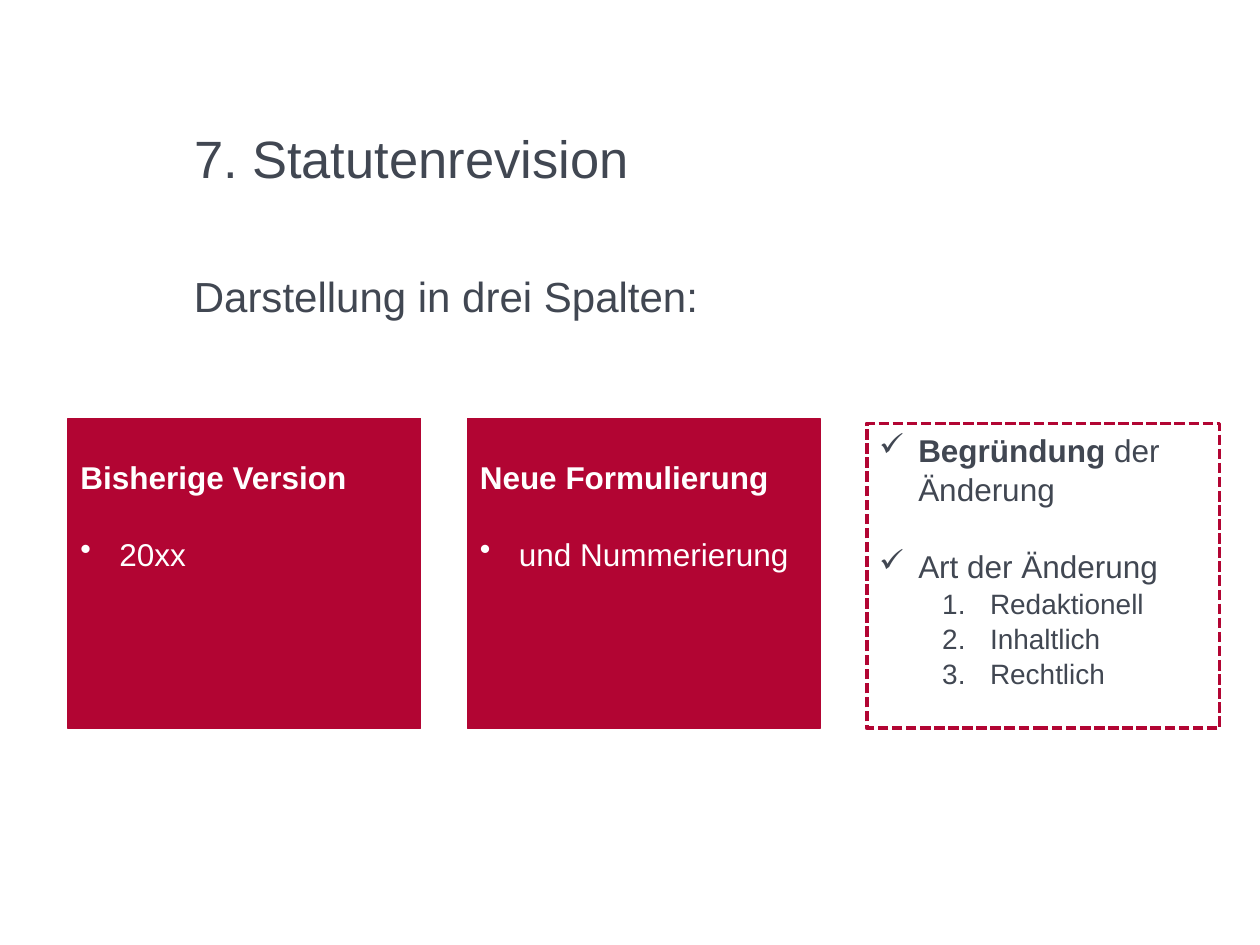
from dataclasses import dataclass
from lxml.etree import SubElement
from pptx import Presentation
from pptx.dml.color import RGBColor as RGB
from pptx.enum.dml import MSO_LINE as Dash
from pptx.enum.shapes import MSO_SHAPE as Shape
from pptx.enum.text import MSO_ANCHOR as Anchor, PP_ALIGN as Align
from pptx.oxml.ns import qn
from pptx.util import Inches, Pt


@dataclass(frozen=True)
class Theme:
    font: str = "Arial"
    red: RGB = RGB(0xB2, 0x05, 0x33)
    ink: RGB = RGB(0x41, 0x47, 0x52)
    white: RGB = RGB(0xFF, 0xFF, 0xFF)
    title: int = 30
    lead: int = 24
    body: int = 18
    sub: int = 16
    gap: float = 21.6
    pitch: float = 1.04


T = Theme()

# Content: each line is (kind, gap before, runs as (text, bold))
TITLE = "7. Statutenrevision"
LEAD = "Darstellung in drei Spalten:"
CARDS = [
    (True, [("head", False, [("Bisherige Version", True)]),
            ("dot", True, [("20xx", False)])]),
    (True, [("head", False, [("Neue Formulierung", True)]),
            ("dot", True, [("und Nummerierung", False)])]),
    (False, [("check", False, [("Begründung", True), (" der Änderung", False)]),
             ("check", True, [("Art der Änderung", False)]),
             ("num", False, [("Redaktionell", False)]),
             ("num", False, [("Inhaltlich", False)]),
             ("num", False, [("Rechtlich", False)])]),
]

# Line kinds: left margin, hanging indent, marker tag and its attributes
KINDS = {
    "head": (0, 0, "a:buNone", {}),
    "dot": (0.31, 0.31, "a:buChar", {"char": "•"}),
    "check": (0.31, 0.31, "a:buChar", {"char": "✓"}),
    "num": (0.88, 0.38, "a:buAutoNum", {"type": "arabicPeriod"}),
}

# Grid
LEFT, STEP, WIDE = 0.54, 3.17, 2.8
BASE = 5.78
TEXT_X = 1.44


def style(para, size, color):
    font = para.font
    font.name, font.size, font.color.rgb = T.font, Pt(size), color


def mark(para, kind):
    left, hang, tag, attrs = KINDS[kind]
    props = para._p.get_or_add_pPr()
    props.set("marL", str(Inches(left)))
    props.set("indent", str(-Inches(hang)))
    SubElement(props, qn(tag), attrs)


def fill_text(frame, lines, color):
    for i, (kind, gap, runs) in enumerate(lines):
        para = frame.paragraphs[0] if i == 0 else frame.add_paragraph()
        mark(para, kind)
        para.level = int(kind == "num")
        para.alignment = Align.LEFT
        para.line_spacing = T.pitch
        para.space_before = Pt(T.gap if gap else 0)
        style(para, T.sub if kind == "num" else T.body, color)
        for text, bold in runs:
            run = para.add_run()
            run.text, run.font.bold = text, bold


def add_card(slide, col, solid, lines):
    top = 3.32 if solid else 3.36
    card = slide.shapes.add_shape(
        Shape.RECTANGLE, Inches(LEFT + col * STEP), Inches(top),
        Inches(WIDE), Inches(BASE - top))
    card.shadow.inherit = False
    card.line.color.rgb = T.red
    card.line.width = Pt(0.75 if solid else 2)
    if solid:
        card.fill.solid()
        card.fill.fore_color.rgb = T.red
    else:
        card.fill.background()
        card.line.dash_style = Dash.SQUARE_DOT
    frame = card.text_frame
    frame.word_wrap = True
    frame.vertical_anchor = Anchor.TOP
    frame.margin_top = Inches(0.3 if solid else 0.05)
    fill_text(frame, lines, T.white if solid else T.ink)


def main():
    deck = Presentation()
    deck.slide_width, deck.slide_height = Inches(10), Inches(7.5)
    slide = deck.slides.add_slide(deck.slide_layouts[5])

    # Title
    title = slide.shapes.title
    title.left, title.top = Inches(TEXT_X), Inches(0.83)
    title.width, title.height = Inches(8.25), Inches(0.72)
    title.text_frame.text = TITLE
    title.text_frame.vertical_anchor = Anchor.BOTTOM
    para = title.text_frame.paragraphs[0]
    para.alignment = Align.LEFT
    style(para, T.title, T.ink)

    # Lead line
    box = slide.shapes.add_textbox(
        Inches(TEXT_X), Inches(2.08), Inches(5), Inches(0.91))
    box.text_frame.word_wrap = True
    box.text_frame.text = LEAD
    para = box.text_frame.paragraphs[0]
    para.line_spacing = T.pitch
    style(para, T.lead, T.ink)

    # Three columns
    for col, (solid, lines) in enumerate(CARDS):
        add_card(slide, col, solid, lines)

    deck.save("out.pptx")


if __name__ == "__main__":
    main()
